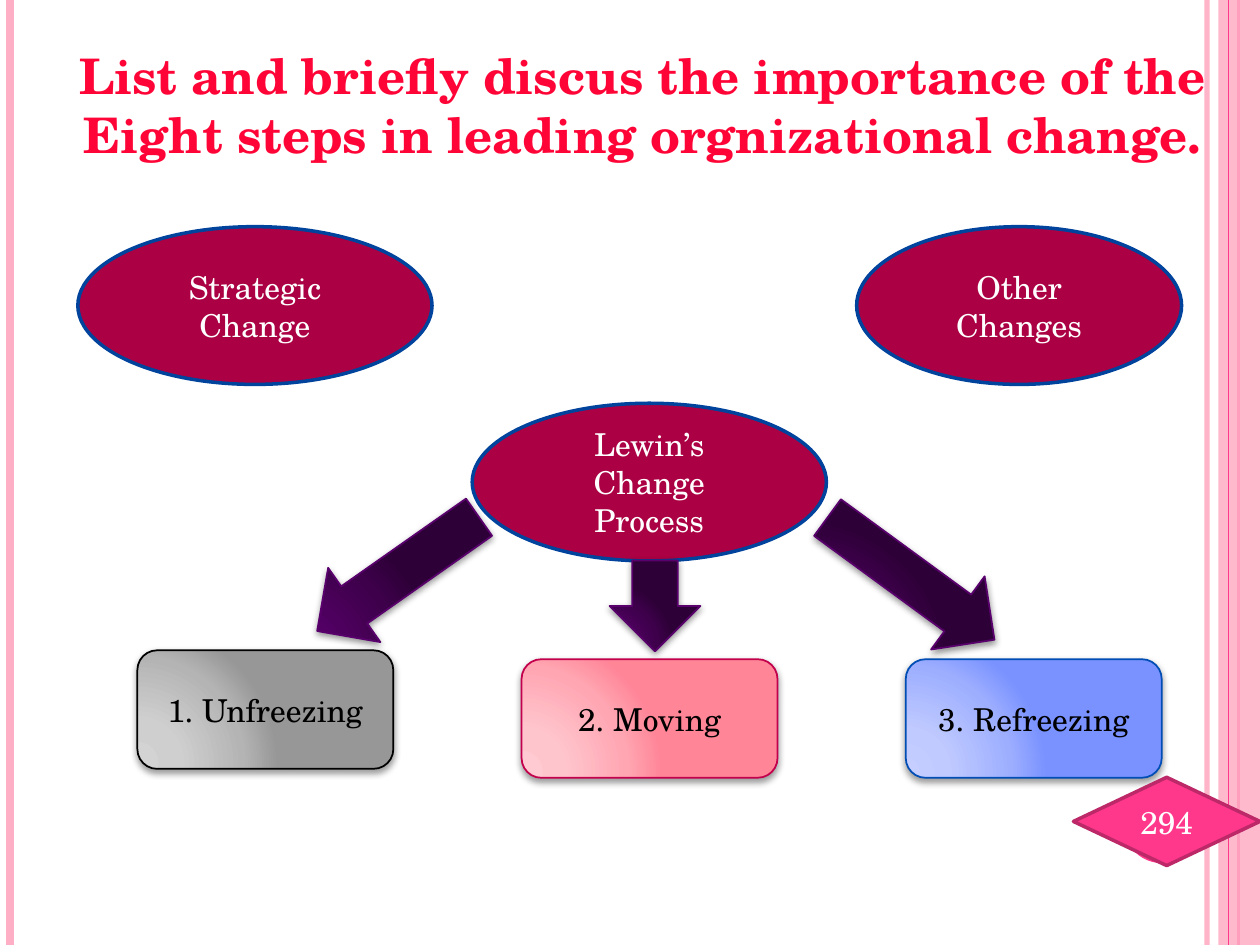
import pptx
import pptx.util
import pptx.dml.color
import pptx.enum.shapes
import pptx.enum.text
import pptx.oxml
import pptx.oxml.ns

Cm = pptx.util.Cm
Pt = pptx.util.Pt
SHAPES = pptx.enum.shapes.MSO_SHAPE
MIDDLE = pptx.enum.text.MSO_ANCHOR.MIDDLE
CENTER = pptx.enum.text.PP_ALIGN.CENTER
FONT = "TeX Gyre Schola"
STOPS = (0, 30, 75, 100)
PURPLE = ("550068", "520064", "3E004B", "2E0038")


def colour(value):
    """Turn a hex string into a colour."""
    return pptx.dml.color.RGBColor.from_string(value)


def element(tag, attributes="", inner=""):
    """Build one drawing element from its tag, attributes and content."""
    names = pptx.oxml.ns.nsdecls("a")
    return pptx.oxml.parse_xml(f"<a:{tag} {names} {attributes}>{inner}</a:{tag}>")


def set_alpha(fill_owner, percent):
    """Make the solid fill inside an element partly transparent."""
    for node in fill_owner.iter(pptx.oxml.ns.qn("a:srgbClr")):
        node.append(element("alpha", f'val="{percent * 1000}"'))


def write(frame, lines, size, value, bold=False):
    """Fill a text frame with centred paragraphs."""
    style = {"name": FONT, "size": Pt(size), "bold": bold}
    for index, line in enumerate(lines):
        para = frame.add_paragraph() if index else frame.paragraphs[0]
        para.alignment = CENTER
        span = para.add_run()
        span.text = line
        for key, setting in style.items():
            setattr(span.font, key, setting)
        span.font.color.rgb = colour(value)


def add_figure(page, kind, box, fill, line=None, width=1, text=None, ink="FFFFFF"):
    """Add a filled shape with an optional outline and caption."""
    shape = page.shapes.add_shape(kind, *map(Cm, box))
    shape.shadow.inherit = False
    shape.fill.solid()
    shape.fill.fore_color.rgb = colour(fill)
    if line:
        shape.line.color.rgb = colour(line)
        shape.line.width = Pt(width)
    else:
        shape.line.fill.background()
    if text:
        shape.text_frame.word_wrap = True
        shape.text_frame.vertical_anchor = MIDDLE
        write(shape.text_frame, [text], 18, ink)
    return shape


def add_glow(shape, colours, opacity, distance):
    """Give a shape a radial gradient and a soft shadow below it."""
    stops = "".join(
        f'<a:gs pos="{stop * 1000}"><a:srgbClr val="{value}"/></a:gs>'
        for stop, value in zip(STOPS, colours)
    )
    gradient = element(
        "gradFill", 'rotWithShape="1"',
        f'<a:gsLst>{stops}</a:gsLst><a:path path="circle">'
        '<a:fillToRect l="5000" t="100000" r="120000" b="10000"/></a:path>')
    shadow = element(
        "outerShdw",
        f'blurRad="{Pt(4)}" dist="{Pt(distance)}" dir="5400000" rotWithShape="0"',
        f'<a:srgbClr val="000000"><a:alpha val="{opacity * 1000}"/></a:srgbClr>')
    properties = shape.element.spPr
    properties.replace(properties.find(pptx.oxml.ns.qn("a:solidFill")), gradient)
    properties.find(pptx.oxml.ns.qn("a:effectLst")).append(shadow)


def add_rule(page, x, height, value, width, alpha=100):
    """Add a vertical line over the full page height."""
    rule = page.shapes.add_connector(
        pptx.enum.shapes.MSO_CONNECTOR.STRAIGHT, Cm(x), Cm(0), Cm(x), Cm(height))
    rule.line.color.rgb = colour(value)
    rule.line.width = Pt(width)
    if alpha < 100:
        set_alpha(rule.element.spPr, alpha)
    rule.element.spPr.append(element("effectLst"))


def add_frame(page, box):
    """Draw the pink bands along both page edges."""
    left, top, width, height = box
    right = left + width
    add_rule(page, right - 1.07, height, "FFAFC5", 3, 93)
    add_rule(page, left + 0.2, height, "FFAFC5", 4.5)
    add_rule(page, right - 0.43, height, "FF388C", 1.5)
    band = add_figure(page, SHAPES.RECTANGLE, (right - 0.84, top, 0.84, height), "FFAFC5")
    set_alpha(band.element.spPr, 87)
    add_rule(page, right - 0.63, height, "FF388C", 0.75)


def add_changes(page, box):
    """Place the three ovals that name the kinds of change."""
    left, top = box[:2]
    ovals = (
        ("Strategic Change", 0, 0, 7.14),
        ("Other Changes", 15.7, 0, 6.55),
        ("Lewin’s Change Process", 7.95, 3.56, 7.14),
    )
    for text, x, y, width in ovals:
        add_figure(page, SHAPES.OVAL, (left + x, top + y, width, 3.18),
                   "AB0043", "00439C", 2, text)


def add_stages(page, box):
    """Place the three numbered stages at equal steps."""
    left, top, width, height = box
    step = (width - 5.16) / 2
    stages = (
        ("1. Unfreezing", 0, "000000", ("D3D3D3", "CFCFCF", "B4B4B4", "979797")),
        ("2. Moving", 0.18, "C3004C", ("FFCAD1", "FFC5CD", "FFA6B2", "FF8597")),
        ("3. Refreezing", 0.18, "004EB5", ("C5CEFF", "C0CAFF", "9DAEFF", "7992FF")),
    )
    for index, (text, drop, line, colours) in enumerate(stages):
        place = (left + index * step, top + drop, 5.16, height)
        stage = add_figure(page, SHAPES.ROUNDED_RECTANGLE, place, colours[0],
                           line, 1, text, "000000")
        add_glow(stage, colours, 40, 2)


def add_arrows(page, box):
    """Place the arrows that lead from the process to its stages."""
    left, top = box[:2]
    for x, y, length, turn in ((0, 0, 3.99, 54.9), (5.18, 1.72, 1.83, 0),
                               (10.34, 0, 4.17, 306.2)):
        arrow = add_figure(page, SHAPES.DOWN_ARROW, (left + x, top + y, 1.83, length),
                           PURPLE[0], "59006D")
        arrow.rotation = turn
        add_glow(arrow, PURPLE, 42, 1.6)


def add_title(page, box):
    """Move, fill and format the title, in front of the diagram."""
    title = page.shapes.title
    for key, length in zip(("left", "top", "width", "height"), box):
        setattr(title, key, Cm(length))
    frame = title.text_frame
    settings = {
        "word_wrap": False,
        "auto_size": pptx.enum.text.MSO_AUTO_SIZE.SHAPE_TO_FIT_TEXT,
        "vertical_anchor": pptx.enum.text.MSO_ANCHOR.TOP,
    }
    for key, setting in settings.items():
        setattr(frame, key, setting)
    write(frame, ["List and briefly discus the importance of the",
                  "Eight steps in leading orgnizational change."], 28, "FF0537", True)
    page.shapes.element.append(title.element)


def add_page_number(page, box):
    """Place the page number diamond over its round base."""
    left, top = box[:2]
    add_figure(page, SHAPES.OVAL, (left + 1.02, top + 0.21, 1.52, 1.52), "FF388C")
    add_figure(page, SHAPES.FLOWCHART_DECISION, box, "FF388C", "BD2968", 2, "294")


def main():
    """Build the deck and save it."""
    deck = pptx.Presentation()
    deck.slide_width, deck.slide_height = Cm(25.4), Cm(19.05)
    page = deck.slides.add_slide(deck.slide_layouts[5])
    add_frame(page, (0, 0, 25.4, 19.05))
    add_changes(page, (1.57, 4.57, 22.25, 6.74))
    add_stages(page, (2.77, 13.11, 20.65, 2.39))
    add_arrows(page, (7.11, 9.58, 12.17, 4.17))
    add_title(page, (1.19, 0.79, 23.52, 2.64))
    add_page_number(page, (21.64, 15.67, 3.76, 1.78))
    deck.save("out.pptx")


if __name__ == "__main__":
    main()
